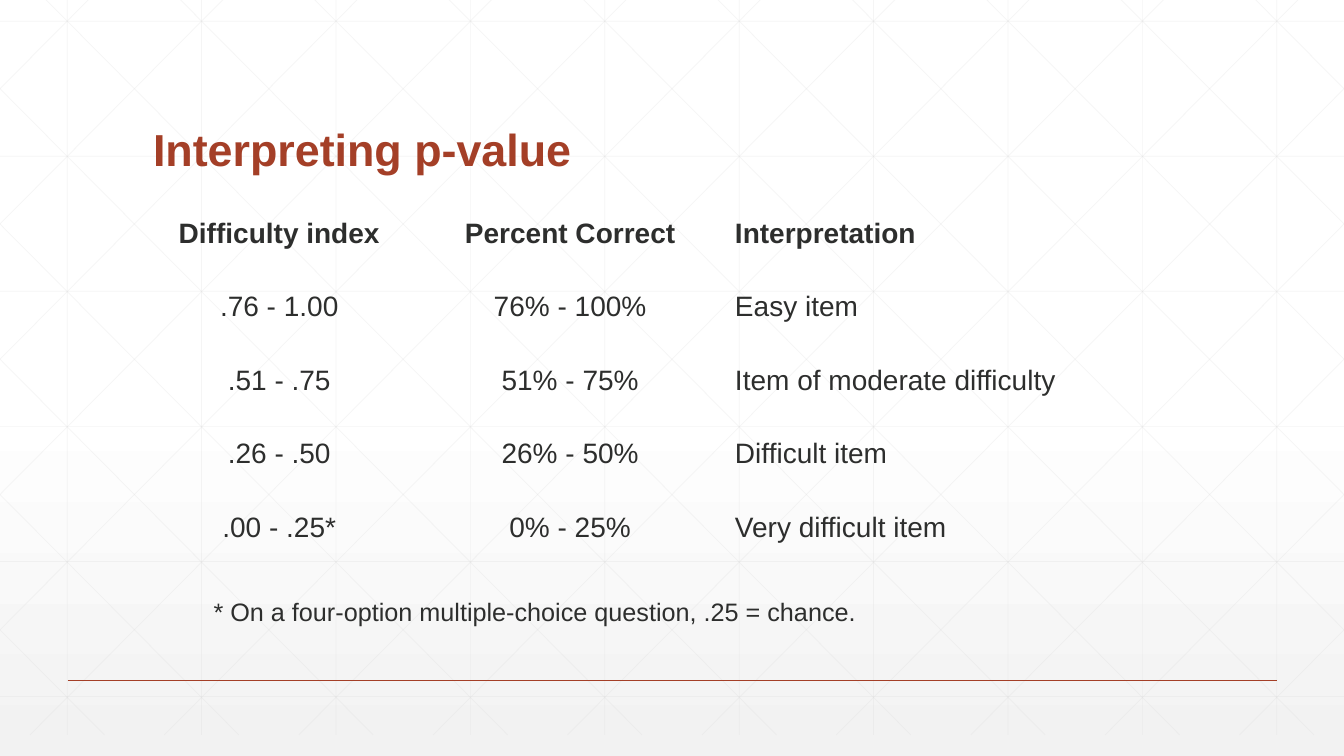
from copy import deepcopy

from lxml import etree
from pptx import Presentation
from pptx.dml.color import RGBColor
from pptx.enum import shapes, text
from pptx.oxml import ns
from pptx.util import Inches, Pt

COLORS = {"accent": "A43F27", "text": "2D2E2D", "grid": "D9D9D9",
          "top": "FFFFFF", "bottom": "F2F2F2"}
FONT = "Arial"
WIDTH, HEIGHT = 13.33, 7.5
ROWS = [
    ("Difficulty index", "Percent Correct", "Interpretation"),
    (".76 - 1.00", "76% - 100%", "Easy item"),
    (".51 - .75", "51% - 75%", "Item of moderate difficulty"),
    (".26 - .50", "26% - 50%", "Difficult item"),
    (".00 - .25*", "0% - 25%", "Very difficult item"),
]


def rgb(name):
    return RGBColor.from_string(COLORS[name])


def style_paragraph(paragraph, size, color, bold=False):
    paragraph.font.name = FONT
    paragraph.font.size = Pt(size)
    paragraph.font.bold = bold
    paragraph.font.color.rgb = rgb(color)


def add_line(slide, start, end, color, width, opacity=None):
    """Draw a shadowless line; opacity is a percentage."""
    line = slide.shapes.add_connector(
        shapes.MSO_CONNECTOR.STRAIGHT, *map(Inches, (*start, *end)))
    line.line.color.rgb = rgb(color)
    line.line.width = Pt(width)
    properties = line._element.spPr
    if opacity is not None:
        tone = properties.find(".//" + ns.qn("a:srgbClr"))
        etree.SubElement(tone, ns.qn("a:alpha"), val=str(opacity * 1000))
    etree.SubElement(properties, ns.qn("a:effectLst"))


def set_background(slide):
    fill = slide.background.fill
    fill.gradient()
    fill.gradient_angle = 270
    stop_list = slide._element.find(".//" + ns.qn("a:gsLst"))
    stop_list.append(deepcopy(stop_list[-1]))
    stops = [(0, "top"), (0.53, "top"), (1, "bottom")]
    for stop, (position, color) in zip(fill.gradient_stops, stops):
        stop.position = position
        stop.color.rgb = rgb(color)


def add_grid(slide, left, top, width, height):
    """Draw verticals, horizontals and mirrored diagonals clipped to the box."""
    step, row_step = width / 10, 1.34
    right, bottom = left + width, top + height
    segments = []
    for index in range(10):
        x = left + step * (index + 0.5)
        segments.append(((x, top), (x, bottom)))
    for index in range(6):
        y = top + 0.42 + row_step * index
        segments.append(((left, y), (right, y)))
    run = 7.45  # horizontal reach of a full diagonal
    slope = height / run
    for index in range(-5, 10):
        x = left + 0.25 + step * index
        x1, x2 = max(x, left), min(x + run, right)
        y1, y2 = top + (x1 - x) * slope, top + (x2 - x) * slope
        segments.append(((x1, y1), (x2, y2)))
        segments.append(((left + right - x1, y1), (left + right - x2, y2)))
    for start, end in segments:
        add_line(slide, start, end, "grid", 0.5, opacity=25)


def add_text(slide, box, content, size, color, bold=False, wrap=True,
             anchor=text.MSO_ANCHOR.TOP, spacing=None):
    frame = slide.shapes.add_textbox(*map(Inches, box)).text_frame
    frame.word_wrap = wrap
    frame.vertical_anchor = anchor
    paragraph = frame.paragraphs[0]
    paragraph.text = content
    paragraph.line_spacing = spacing
    style_paragraph(paragraph, size, color, bold)


def add_difficulty_table(slide, left, top, width, height):
    frame = slide.shapes.add_table(
        len(ROWS), len(ROWS[0]), *map(Inches, (left, top, width, height)))
    table = frame.table
    table.first_row = table.horz_banding = False
    # "No Style, No Grid" keeps the cells free of borders
    style = table._tbl.tblPr.find(ns.qn("a:tableStyleId"))
    style.text = "{2D5ABB26-0587-4C30-8999-92F81FD0307C}"
    for column, column_width in zip(table.columns, (2.7, 3.07, 4.02)):
        column.width = Inches(column_width)
    for row_index, row in enumerate(ROWS):
        for column_index, content in enumerate(row):
            cell = table.cell(row_index, column_index)
            cell.fill.background()
            paragraph = cell.text_frame.paragraphs[0]
            paragraph.text = content
            paragraph.line_spacing = 1.5
            paragraph.alignment = (text.PP_ALIGN.CENTER if column_index < 2
                                   else text.PP_ALIGN.LEFT)
            style_paragraph(paragraph, 20, "text", bold=row_index == 0)


def main():
    presentation = Presentation()
    presentation.slide_width = Inches(WIDTH)
    presentation.slide_height = Inches(HEIGHT)
    slide = presentation.slides.add_slide(presentation.slide_layouts[6])
    set_background(slide)
    add_grid(slide, 0, -0.21, WIDTH, 7.5)
    add_line(slide, (0.67, 6.75), (12.67, 6.75), "accent", 1)
    add_text(slide, (1.42, 0.55, 10.5, 1.25), "Interpreting p-value", 32,
             "accent", bold=True, anchor=text.MSO_ANCHOR.BOTTOM, spacing=0.9)
    add_difficulty_table(slide, 1.42, 1.96, 9.79, 3.64)
    add_text(slide, (2.02, 5.87, 6.63, 0.4),
             "* On a four-option multiple-choice question, .25 = chance.",
             18, "text", wrap=False)
    presentation.save("out.pptx")


if __name__ == "__main__":
    main()
